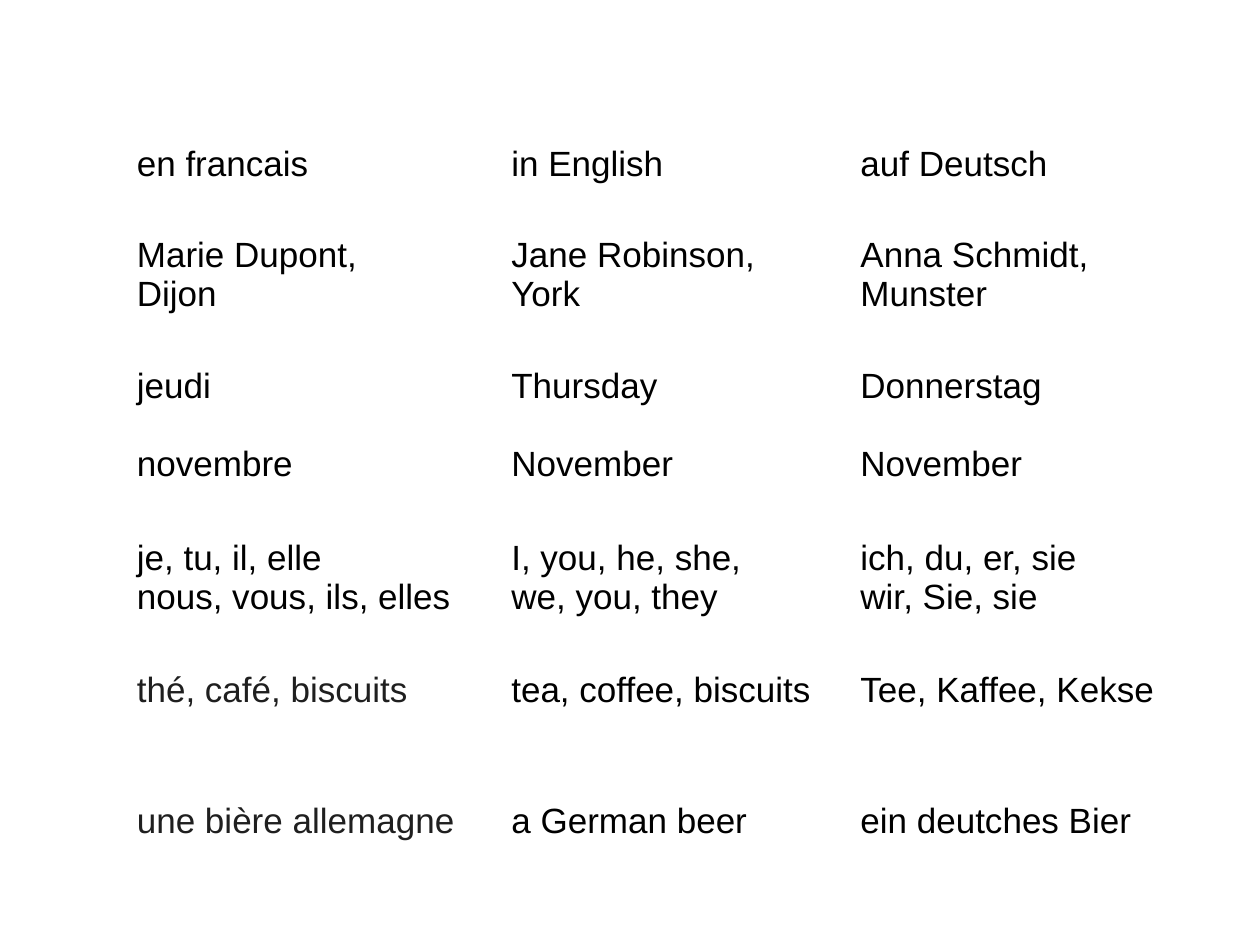
from pptx import Presentation
from pptx.dml.color import RGBColor
from pptx.util import Pt

BLACK = RGBColor(0x00, 0x00, 0x00)
DARK_GREY = RGBColor(0x1F, 0x1F, 0x1F)
FONT_SIZE = Pt(20)
BLANK_LINE = Pt(22.3)

COL_WIDTHS = [33, 214, 199.5, 197]
ROW_HEIGHTS = [28, 52, 75, 98.5, 75, 75, 28]

# French, English, German; the first table row and column stay empty
PHRASES = [
    (["en francais"], ["in English"], ["auf Deutsch"]),
    (["Marie Dupont,", "Dijon"], ["Jane Robinson,", "York"],
     ["Anna Schmidt, Munster"]),
    (["jeudi", "novembre"], ["Thursday", "November"],
     ["Donnerstag", "November"]),
    (["je, tu, il, elle", "nous, vous, ils, elles"],
     ["I, you, he, she,", "we, you, they"],
     ["ich, du, er, sie", "wir, Sie, sie"]),
    (["thé, café, biscuits"], ["tea, coffee, biscuits"],
     ["Tee, Kaffee, Kekse"]),
    (["une bière allemagne"], ["a German beer"], ["ein deutches Bier"]),
]
DATE_ROW = 3
FIRST_GREY_ROW = 5

prs = Presentation()
prs.slide_width, prs.slide_height = Pt(720), Pt(540)
s = prs.slides.add_slide(prs.slide_layouts[6])

table = s.shapes.add_table(
    len(ROW_HEIGHTS), len(COL_WIDTHS), Pt(38), Pt(54),
    Pt(sum(COL_WIDTHS)), Pt(sum(ROW_HEIGHTS))).table
table.first_row = False
table.horz_banding = False
for col, width in zip(table.columns, COL_WIDTHS):
    col.width = Pt(width)
for row, height in zip(table.rows, ROW_HEIGHTS):
    row.height = Pt(height)

for cell in table.iter_cells():
    cell.fill.background()
    cell.margin_left = cell.margin_right = Pt(7.2)
    cell.margin_top, cell.margin_bottom = Pt(0.7), Pt(0)

for i, phrases in enumerate(PHRASES, start=1):
    for j, lines in enumerate(phrases, start=1):
        tf = table.cell(i, j).text_frame
        for n, line in enumerate(lines):
            p = tf.add_paragraph() if n else tf.paragraphs[0]
            if n and i == DATE_ROW:
                p.space_before = BLANK_LINE
            r = p.add_run()
            r.text = line
            r.font.name = "Arial"
            r.font.size = FONT_SIZE
            is_grey = j == 1 and i >= FIRST_GREY_ROW
            r.font.color.rgb = DARK_GREY if is_grey else BLACK

prs.save("out.pptx")
